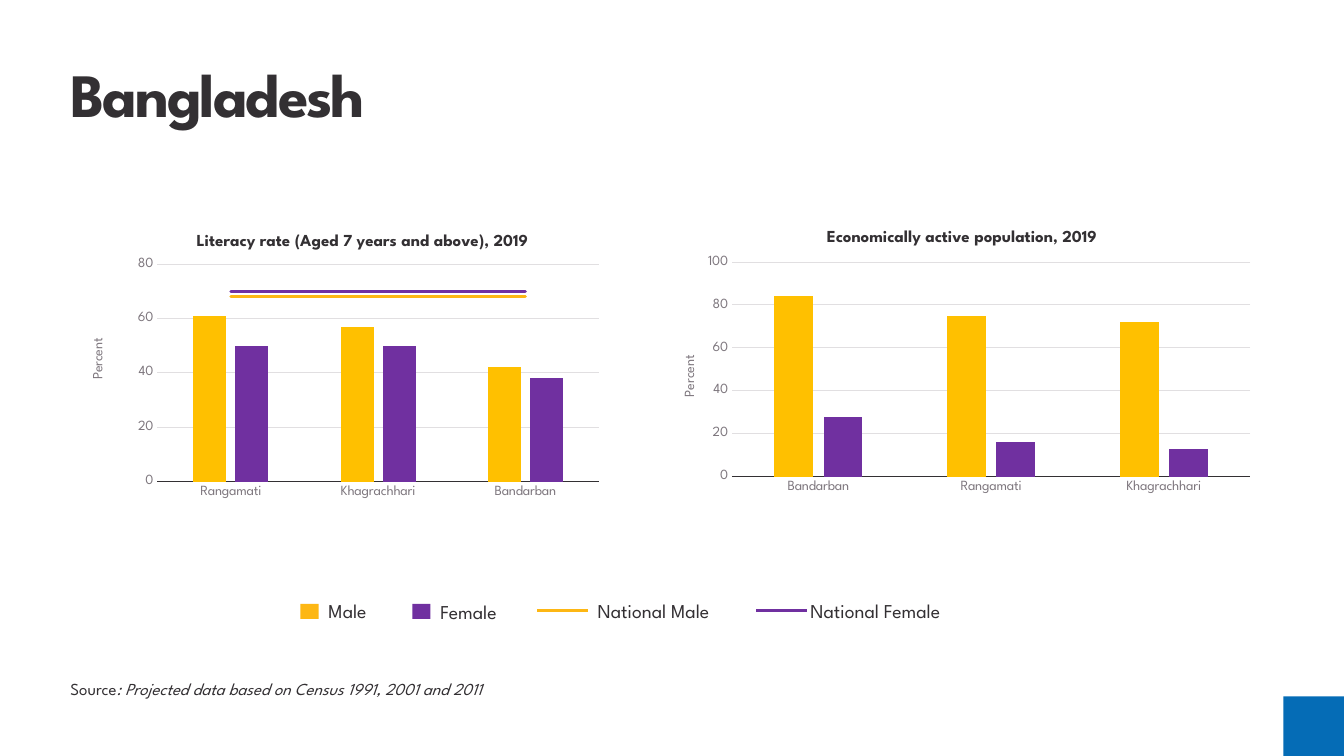
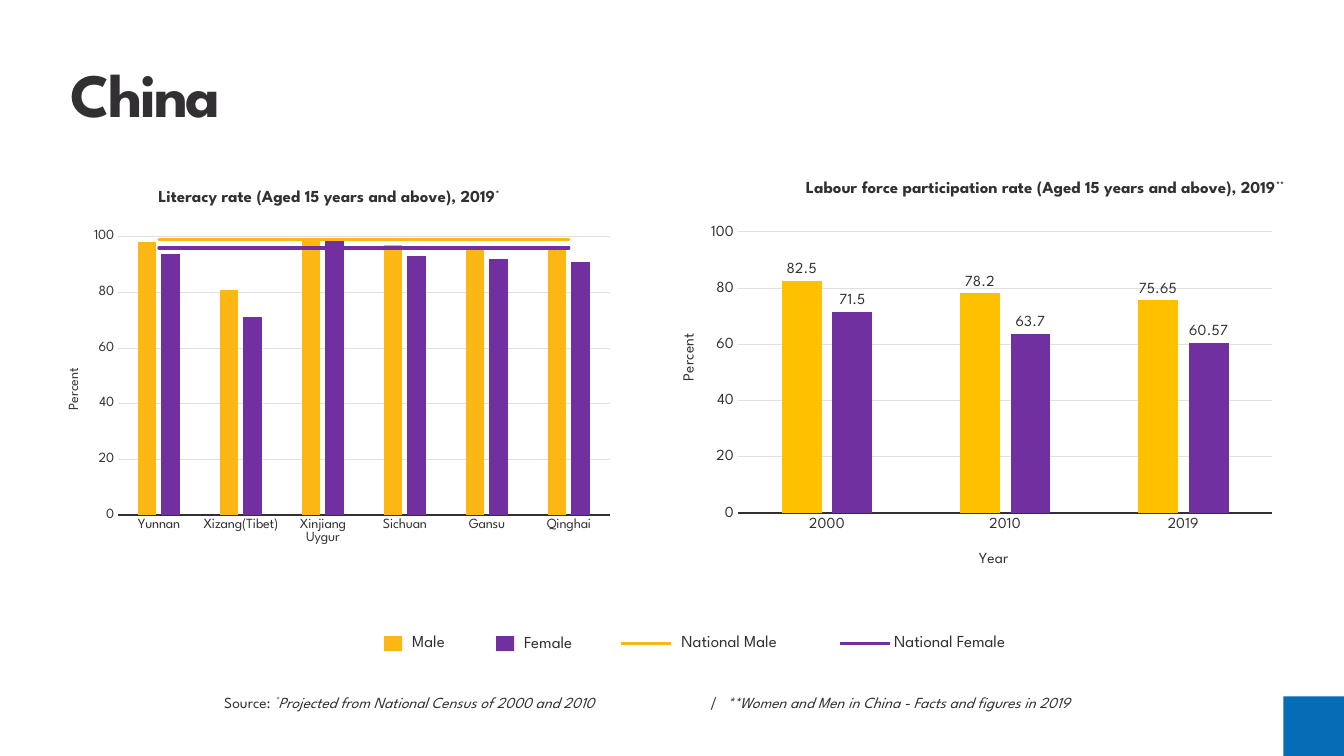
from dataclasses import dataclass

from lxml import etree
from pptx import Presentation
from pptx.chart.data import CategoryChartData
from pptx.dml.color import RGBColor
from pptx.enum.chart import XL_CHART_TYPE, XL_LABEL_POSITION, XL_MARKER_STYLE, XL_TICK_MARK
from pptx.enum.shapes import MSO_CONNECTOR, MSO_SHAPE
from pptx.enum.text import MSO_ANCHOR, PP_ALIGN
from pptx.oxml.ns import qn
from pptx.oxml.xmlchemy import OxmlElement
from pptx.util import Pt

COLUMNS = XL_CHART_TYPE.COLUMN_CLUSTERED
LABEL_ABOVE = XL_LABEL_POSITION.OUTSIDE_END
NO_MARKER = XL_MARKER_STYLE.NONE
NO_TICK = XL_TICK_MARK.NONE
STRAIGHT = MSO_CONNECTOR.STRAIGHT
RECTANGLE = MSO_SHAPE.RECTANGLE
MIDDLE = MSO_ANCHOR.MIDDLE
LEFT, CENTER, RIGHT = PP_ALIGN.LEFT, PP_ALIGN.CENTER, PP_ALIGN.RIGHT
PX = 9144  # 100 px to the inch
SUPER = {"baseline": "30000"}


@dataclass(frozen=True)
class Theme:
    font: str = "League Spartan"
    ink: str = "333033"
    muted: str = "7D767D"
    grid: str = "E1DFE1"
    accent: str = "056CB6"
    male: str = "FDB714"
    male_bar: str = "FFC000"
    female: str = "7030A0"
    title_size: int = 44
    heading_size: int = 12


THEME = Theme()


def px(*lengths):
    return [length * PX for length in lengths]


def rgb(code):
    return RGBColor.from_string(code)


def style_font(font, size, color=THEME.ink, **flags):
    values = {"name": THEME.font, "size": Pt(size), **flags}
    for name, value in values.items():
        setattr(font, name, value)
    font.color.rgb = rgb(color)


def write(para, spans, size, color=THEME.ink, **flags):
    """Add spans: each is a text, or a (text, font flags, run attributes) triple."""
    for item in spans:
        text, extra, attributes = (item, {}, {}) if isinstance(item, str) else item
        span = para.add_run()
        span.text = text
        style_font(span.font, size, color, **{**flags, **extra})
        for name, value in attributes.items():
            span.font._element.set(name, value) if hasattr(span.font, "_element") else \
                span.font._rPr.set(name, value)


def add_text(shapes, box, spans, size, align=LEFT, anchor=None, tab=None, spacing=None, **flags):
    frame = shapes.add_textbox(*px(*box)).text_frame
    frame.word_wrap = True
    if anchor:
        frame.vertical_anchor = anchor
    para = frame.paragraphs[0]
    if tab:
        tabs = etree.SubElement(para._p.get_or_add_pPr(), qn("a:tabLst"))
        etree.SubElement(tabs, qn("a:tab"), pos=str(tab * PX), algn="l")
    para.alignment = align
    if spacing:
        para.line_spacing = spacing
    write(para, spans, size, **flags)


def add_block(shapes, box, color):
    block = shapes.add_shape(RECTANGLE, *px(*box))
    block.shadow.inherit = False
    block.fill.solid()
    block.fill.fore_color.rgb = rgb(color)
    block.line.fill.background()
    return block


def add_page(deck, layout, title):
    page = deck.slides.add_slide(layout)
    holder = page.shapes.title
    holder.left, holder.top, holder.width, holder.height = px(60, 54, 1213, 76)
    holder.text_frame.vertical_anchor = MIDDLE
    para = holder.text_frame.paragraphs[0]
    para.alignment = LEFT
    write(para, [(title, {}, {"spc": "-150"})], THEME.title_size, bold=True)
    return page


def set_layout(parent, index, chart_box, place):
    """Fix a chart part at place, in px from the corner of the chart box."""
    for old in parent.findall(qn("c:layout")):
        parent.remove(old)
    layout = OxmlElement("c:layout")
    parent.insert(index, layout)
    manual = etree.SubElement(layout, qn("c:manualLayout"))
    keys = "xywh"[:len(place)]
    if len(place) == 4:
        etree.SubElement(manual, qn("c:layoutTarget"), val="inner")
    for key in keys[:2]:
        etree.SubElement(manual, qn(f"c:{key}Mode"), val="edge")
    for key, length, whole in zip(keys, place, chart_box[2:] * 2):
        etree.SubElement(manual, qn(f"c:{key}"), val=str(round(length / whole, 4)))


def place_title(title, chart_box, place, spans, size, color, **flags):
    write(title.text_frame.paragraphs[0], spans, size, color, **flags)
    set_layout(title._element, 1, chart_box, place)


def move_to_lines(chart, count):
    """Turn all series after the first count into lines on the same axes."""
    bars = chart.plots[0]._element
    lines = OxmlElement("c:lineChart")
    etree.SubElement(lines, qn("c:grouping"), val="standard")
    etree.SubElement(lines, qn("c:varyColors"), val="0")
    for series in bars.findall(qn("c:ser"))[count:]:
        for unused in series.findall(qn("c:invertIfNegative")):
            series.remove(unused)
        lines.append(series)
    etree.SubElement(lines, qn("c:marker"), val="1")
    for axis in bars.findall(qn("c:axId")):
        etree.SubElement(lines, qn("c:axId"), val=axis.get("val"))
    bars.addnext(lines)
    for series, color in zip(chart.plots[1].series, (THEME.male, THEME.female)):
        series.smooth = False
        series.marker.style = NO_MARKER
        series.format.line.color.rgb = rgb(color)
        series.format.line.width = Pt(2.25)
    for outline in lines.iter(qn("a:ln")):
        outline.set("cap", "rnd")


def style_axes(chart, size, color, top, base_width):
    for axis in (chart.category_axis, chart.value_axis):
        axis.major_tick_mark = axis.minor_tick_mark = NO_TICK
        style_font(axis.tick_labels.font, size, color)
    base = chart.category_axis.format.line
    base.color.rgb = rgb(THEME.ink)
    base.width = Pt(base_width)
    scale = chart.value_axis
    scale.minimum_scale, scale.maximum_scale, scale.major_unit = 0, top, 20
    scale.tick_labels.number_format = "0"
    scale.tick_labels.number_format_is_linked = False
    scale.format.line.fill.background()
    scale.has_major_gridlines = True
    scale.major_gridlines.format.line.color.rgb = rgb(THEME.grid)
    scale.major_gridlines.format.line.width = Pt(0.75)


def add_bar_chart(page, box, plot_box, categories, values, percent_at, heading=None,
                  heading_at=None, year_at=None, size=10, color=THEME.ink, top=100,
                  base_width=0.75, male=THEME.male_bar, labels=False):
    data = CategoryChartData()
    data.categories = categories
    for number, row in enumerate(values, 1):
        data.add_series(f"Series {number}", row)
    chart = page.shapes.add_chart(COLUMNS, *px(*box), data).chart
    style_font(chart.font, size)
    chart.has_legend = False
    chart.has_title = bool(heading)
    if heading:
        place_title(chart.chart_title, box, heading_at, heading, THEME.heading_size,
                    THEME.ink, bold=True)
    if len(values) > 2:
        move_to_lines(chart, 2)
    bars = chart.plots[0]
    bars.gap_width, bars.overlap, bars.vary_by_categories = 219, -27, False
    for series, fill in zip(bars.series, (male, THEME.female)):
        series.format.fill.solid()
        series.format.fill.fore_color.rgb = rgb(fill)
    if labels:
        bars.has_data_labels = True
        bars.data_labels.show_value = True
        bars.data_labels.position = LABEL_ABOVE
        style_font(bars.data_labels.font, size)
    style_axes(chart, size, color, top, base_width)
    percent = chart.value_axis.axis_title
    place_title(percent, box, percent_at, ["Percent"], size, color, bold=False)
    body = percent.text_frame._txBody.bodyPr
    body.set("rot", "-5400000")
    body.set("vert", "horz")
    if year_at:
        place_title(chart.category_axis.axis_title, box, year_at, ["Year"], size, color,
                    bold=False)
    set_layout(bars._element.getparent(), 0, box, plot_box)


def add_legend(page, left, top, size):
    shapes = page.shapes.add_group_shape().shapes
    for name, x, color in (("Male", 0, THEME.male), ("Female", 111, THEME.female)):
        add_block(shapes, (left + x, top + 10, 18, 15), color)
        add_text(shapes, (left + x + 18, top + x // 111, 110, 34), [name], size)
    for name, x, gap, color in (("National Male", 235, 0, THEME.male),
                                ("National Female", 452, -6, THEME.female)):
        start, end, y = left + x, left + x + 50, top + 17
        line = shapes.add_connector(STRAIGHT, *px(start, y, end, y))
        line.line.color.rgb = rgb(color)
        line.line.width = Pt(2)
        etree.SubElement(line._element.spPr, qn("a:effectLst"))
        add_text(shapes, (end + gap, top, 190, 34), [name], size)


def add_bangladesh(deck, layout):
    page = add_page(deck, layout, "Bangladesh")
    add_bar_chart(
        page, (82, 195, 525, 385), (74, 67, 438, 216),
        ["Rangamati", "Khagrachhari", "Bandarban"],
        [(61, 57, 42), (50, 50, 38), (68,) * 3, (70,) * 3],
        percent_at=(6, 138), heading=["Literacy rate (Aged 7 years and above), 2019"],
        heading_at=(110, 33), color=THEME.muted, top=80)
    add_bar_chart(
        page, (652, 207, 599, 398), (74, 53, 514, 213),
        ["Bandarban", "Rangamati", "Khagrachhari"], [(84, 75, 72), (28, 16, 13)],
        percent_at=(23, 143), heading=["Economically active population, 2019"],
        heading_at=(165, 17), color=THEME.muted, base_width=1)
    add_legend(page, 298, 589, 14)
    add_text(page.shapes, (60, 667, 775, 30),
             ["Source", (": Projected data based on Census 1991, 2001 and 2011",
                         {"italic": True}, {})], 12, spacing=1.07)
    return page


def add_china(deck, layout):
    page = add_page(deck, layout, "China")
    add_bar_chart(
        page, (23, 175, 597, 475), (94, 60, 488, 276),
        ["Yunnan", "Xizang(Tibet)", "Xinjiang Uygur", "Sichuan", "Gansu", "Qinghai"],
        [(98, 81, 99, 97, 96, 96), (94, 71, 99, 93, 92, 91), (99,) * 6, (96,) * 6],
        percent_at=(41, 188), heading_at=(131, 9), male=THEME.male,
        heading=["Literacy rate (Aged 15 years and above), 2019", ("*", {}, SUPER)])
    add_bar_chart(
        page, (666, 179, 608, 458), (66, 51, 530, 279), ["2000", "2010", "2019"],
        [(82.5, 78.2, 75.65), (71.5, 63.7, 60.57)],
        percent_at=(6, 149), year_at=(302, 364), size=11, labels=True)
    add_legend(page, 381, 621, 12)
    add_text(page.shapes, (780, 162, 513, 46),
             ["Labour force participation rate (Aged 15 years and above), 2019",
              ("**", {}, SUPER)], THEME.heading_size, CENTER, MIDDLE, bold=True)
    italic = {"italic": True}
    add_text(page.shapes, (44, 681, 556, 28),
             ["Source: ", ("*", italic, SUPER),
              ("Projected from National Census of 2000 and 2010", italic, {})],
             11, RIGHT, spacing=1.07)
    add_text(page.shapes, (695, 681, 521, 28),
             ["|\t**Women and Men in China - Facts and figures in 2019"],
             11, tab=16, spacing=1.07, italic=True)


def main():
    deck = Presentation()
    deck.slide_width, deck.slide_height = px(1333, 750)
    layout = deck.slide_layouts.get_by_name("Title Only")
    page = add_bangladesh(deck, layout)
    corner = add_block(page.shapes, (1273, 691, 60, 60), THEME.accent)
    layout.shapes.element.append(corner._element)  # shared by every page
    add_china(deck, layout)
    deck.save("out.pptx")


if __name__ == "__main__":
    main()
